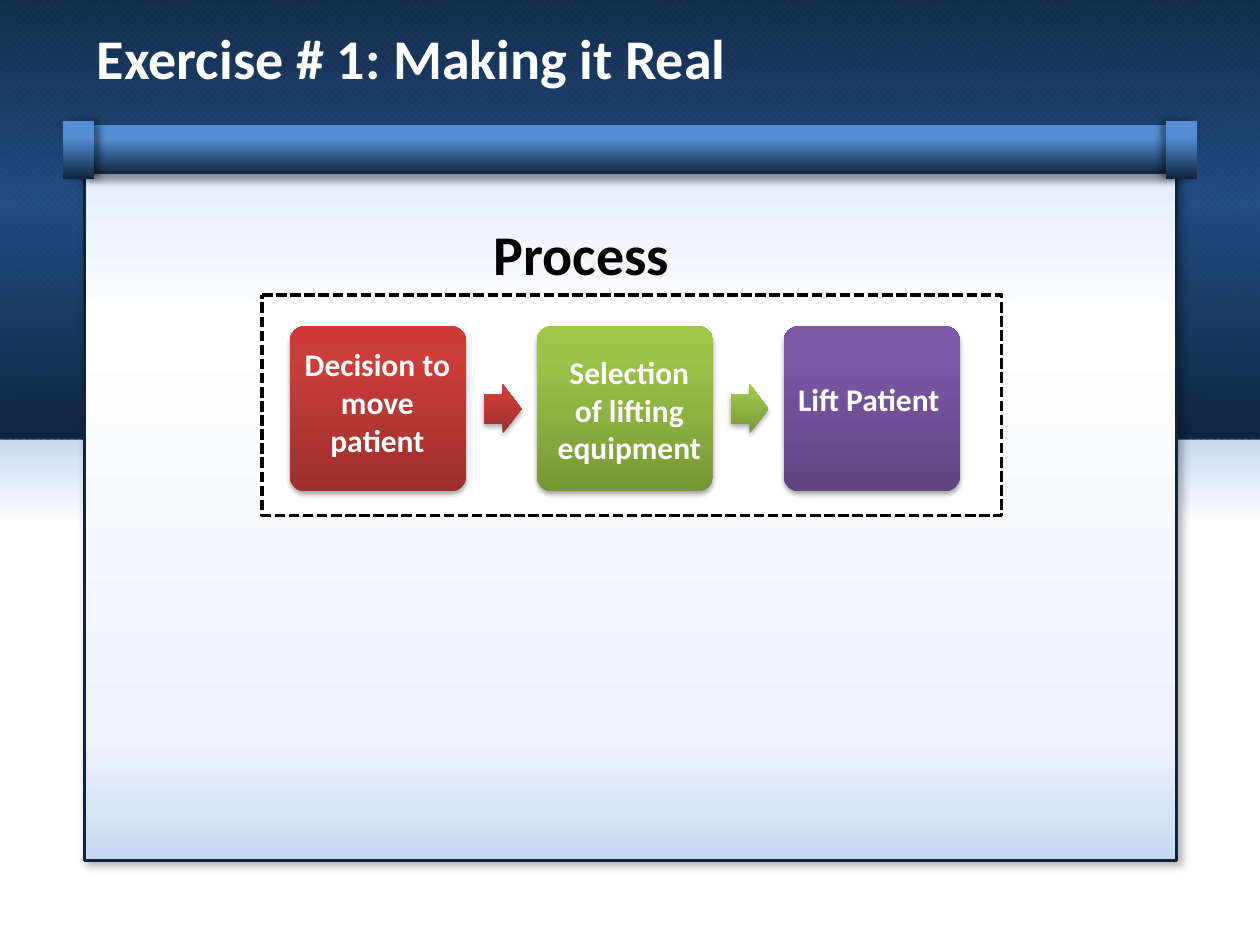
from dataclasses import dataclass
from typing import NamedTuple, Optional

from lxml.etree import SubElement
from pptx import Presentation
from pptx.dml.color import RGBColor
from pptx.enum.dml import MSO_LINE, MSO_PATTERN
from pptx.enum.shapes import MSO_SHAPE as Preset
from pptx.enum.text import MSO_ANCHOR as Anchor, MSO_AUTO_SIZE as AutoSize, PP_ALIGN as Align
from pptx.oxml.ns import qn
from pptx.util import Pt


class Box(NamedTuple):
    left: float
    top: float
    width: float
    height: float

    def lengths(self) -> list:
        return [Pt(value) for value in self]


class Stop(NamedTuple):
    position: int
    color: str
    opacity: int = 100


class Shadow(NamedTuple):
    opacity: int
    blur: float
    distance: float
    angle: int


class Gradient(NamedTuple):
    stops: tuple
    angle: int = 90


@dataclass(frozen=True)
class Theme:
    font: str = "Calibri"
    heading_size: int = 32
    label_size: int = 18
    white: str = "FFFFFF"
    black: str = "000000"
    navy: str = "0F243E"
    blue: str = "558ED5"
    sky: Gradient = Gradient((Stop(0, "0F243E", 90), Stop(46, "1F497D", 90), Stop(100, "0F243E")))
    floor: Gradient = Gradient((Stop(0, "8EB4E3"), Stop(29, "FFFFFF"), Stop(100, "FFFFFF")))
    screen: Gradient = Gradient(
        (Stop(0, "DAE6F6"), Stop(25, "FFFFFF"), Stop(83, "EEF3FB"), Stop(100, "C6D9F1")))
    rod: Gradient = Gradient((Stop(28, "558ED5"), Stop(100, "0F243E")))
    screen_shadow: Shadow = Shadow(30, 4.5, 2.6, 53)
    step_shadow: Shadow = Shadow(35, 3.1, 1.8, 90)


@dataclass(frozen=True)
class Step:
    label: str
    label_box: Box
    shades: tuple


THEME = Theme()
STEPS = (
    Step("Decision to move patient", Box(164.9, 193.7, 101.5, 94.3), ("9C2F2D", "CB3E3A", "CE3B37")),
    Step("Selection of lifting equipment", Box(308.9, 198, 101.5, 72.7), ("779737", "9BC348", "9DC746")),
    Step("Lift Patient", Box(445.7, 213.8, 101.5, 28.8), ("5F4480", "7B58A6", "7C57A8")),
)
STEP_PITCH = 141.1


def rgb(color: str) -> RGBColor:
    return RGBColor.from_string(color)


def add_color(parent, color: str, opacity: int) -> None:
    node = SubElement(parent, qn("a:srgbClr"), val=color)
    if opacity < 100:
        SubElement(node, qn("a:alpha"), val=str(opacity * 1000))


def set_gradient(shape, gradient: Gradient) -> None:
    shape.fill.gradient()
    grad_fill = shape._element.spPr.find(qn("a:gradFill"))
    for child in list(grad_fill):
        grad_fill.remove(child)
    stop_list = SubElement(grad_fill, qn("a:gsLst"))
    for stop in gradient.stops:
        node = SubElement(stop_list, qn("a:gs"), pos=str(stop.position * 1000))
        add_color(node, stop.color, stop.opacity)
    SubElement(grad_fill, qn("a:lin"), ang=str(gradient.angle * 60000), scaled="0")


def set_shadow(shape, shadow: Shadow) -> None:
    effects = shape._element.spPr.find(qn("a:effectLst"))
    node = SubElement(
        effects, qn("a:outerShdw"), blurRad=str(Pt(shadow.blur)), dist=str(Pt(shadow.distance)),
        dir=str(shadow.angle * 60000), algn="ctr", rotWithShape="0")
    add_color(node, THEME.black, shadow.opacity)


def add_panel(slide, preset: Preset, box: Box, gradient: Optional[Gradient] = None,
              shadow: Optional[Shadow] = None, adjustments: tuple = ()):
    panel = slide.shapes.add_shape(preset, *box.lengths())
    for index, value in enumerate(adjustments):
        panel.adjustments[index] = value
    panel.line.fill.background()
    panel.shadow.inherit = False
    if gradient:
        set_gradient(panel, gradient)
    if shadow:
        set_shadow(panel, shadow)
    return panel


def set_outline(panel, color: str) -> None:
    panel.line.color.rgb = rgb(color)
    panel.line.width = Pt(2)


def write(frame, text: str, size: int, color: str, align: Align, wrap: bool = True) -> None:
    frame.word_wrap = wrap
    frame.auto_size = AutoSize.SHAPE_TO_FIT_TEXT
    paragraph = frame.paragraphs[0]
    paragraph.alignment = align
    run = paragraph.add_run()
    run.text = text
    run.font.name = THEME.font
    run.font.size = Pt(size)
    run.font.bold = True
    run.font.color.rgb = rgb(color)


def draw_backdrop(slide) -> None:
    sky_box = Box(-2.2, -0.7, 722.9, 252)
    add_panel(slide, Preset.RECTANGLE, Box(-0.7, 203.8, 722.2, 333.4), THEME.floor)
    weave = add_panel(slide, Preset.RECTANGLE, sky_box)
    weave.fill.patterned()
    weave.fill.pattern = MSO_PATTERN.OUTLINED_DIAMOND
    weave.fill.fore_color.rgb = rgb(THEME.navy)
    weave.fill.back_color.rgb = rgb(THEME.blue)
    add_panel(slide, Preset.RECTANGLE, sky_box, THEME.sky)


def draw_screen(slide) -> None:
    screen = add_panel(slide, Preset.ROUNDED_RECTANGLE, Box(48.2, 77.8, 624.2, 414),
                       THEME.screen, THEME.screen_shadow, (0,))
    set_outline(screen, THEME.navy)
    rod_parts = ((Box(48.2, 71.3, 624.2, 28.1), 90), (Box(36, 69.1, 18, 33.1), 0),
                 (Box(666, 69.1, 18, 33.1), 180))
    for box, shadow_angle in rod_parts:
        add_panel(slide, Preset.RECTANGLE, box, THEME.rod, Shadow(40, 4, 3, shadow_angle))


def draw_title(slide) -> None:
    title = slide.shapes.title
    title.left, title.top, title.width, title.height = Box(48.2, 9.4, 624.2, 46.1).lengths()
    title.text_frame.vertical_anchor = Anchor.BOTTOM
    write(title.text_frame, "Exercise # 1: Making it Real", THEME.heading_size, THEME.white, Align.LEFT)
    slide.shapes._spTree.append(title._element)


def draw_process(slide) -> None:
    frame = add_panel(slide, Preset.FLOWCHART_PROCESS, Box(149.8, 168.5, 422.6, 126))
    frame.fill.solid()
    frame.fill.fore_color.rgb = rgb(THEME.white)
    set_outline(frame, THEME.black)
    frame.line.dash_style = MSO_LINE.SQUARE_DOT

    for index, step in enumerate(STEPS):
        left = 165.6 + index * STEP_PITCH
        gradient = Gradient(tuple(map(Stop, (0, 80, 100), step.shades)), 270)
        add_panel(slide, Preset.ROUNDED_RECTANGLE, Box(left, 186.5, 100.8, 94.3),
                  gradient, THEME.step_shadow, (0.09,))
        if index < len(STEPS) - 1:
            add_panel(slide, Preset.RIGHT_ARROW, Box(left + 110.9, 219.6, 21.6, 28.1),
                      gradient, THEME.step_shadow, (0.6, 0.5))

    heading = slide.shapes.add_textbox(*Box(275, 121.7, 115.9, 46.1).lengths())
    write(heading.text_frame, "Process", THEME.heading_size, THEME.black, Align.LEFT, wrap=False)
    for step in STEPS:
        label = slide.shapes.add_textbox(*step.label_box.lengths())
        write(label.text_frame, step.label, THEME.label_size, THEME.white, Align.CENTER)


def main() -> None:
    deck = Presentation()
    deck.slide_width, deck.slide_height = Pt(720), Pt(540)
    slide = deck.slides.add_slide(deck.slide_layouts[5])
    draw_backdrop(slide)
    draw_screen(slide)
    draw_title(slide)
    draw_process(slide)
    deck.save("out.pptx")


if __name__ == "__main__":
    main()
